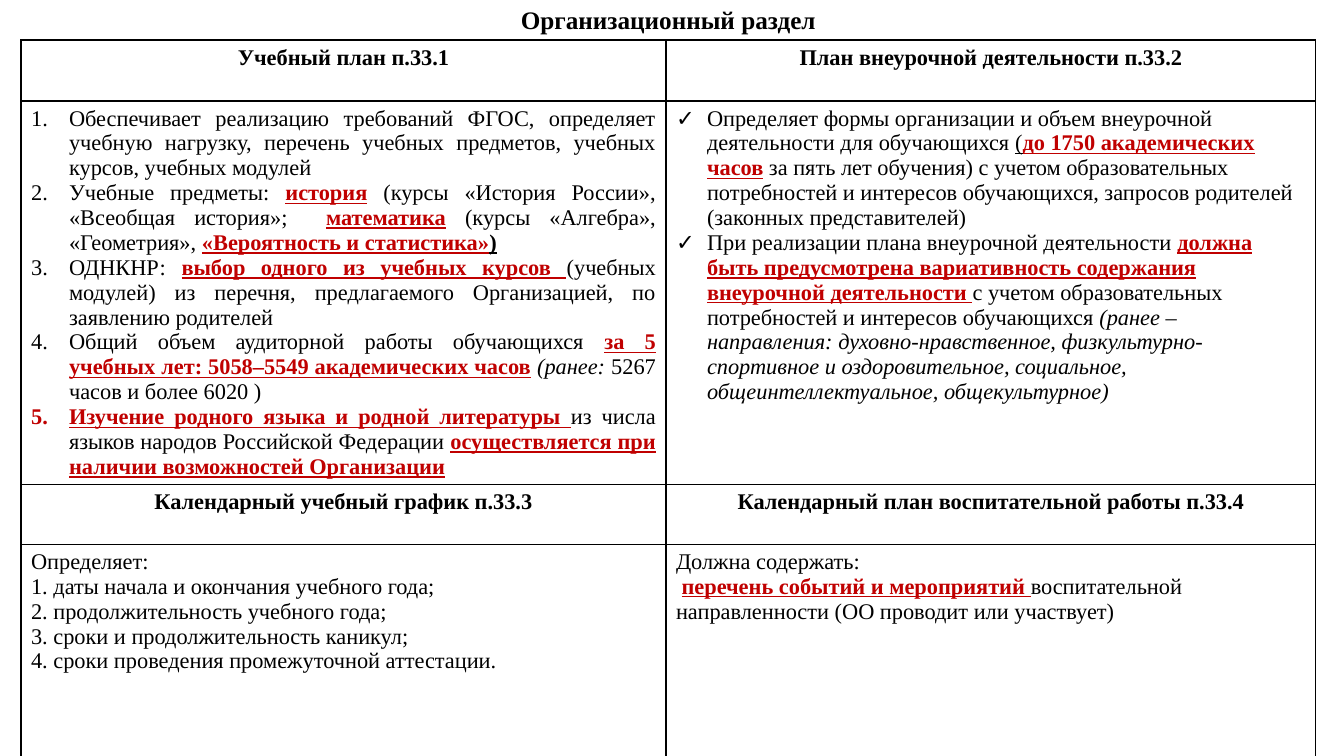
from pptx import Presentation
from pptx.dml.color import RGBColor as Rgb
from pptx.enum.text import PP_ALIGN as Align
from pptx.oxml import parse_xml
from pptx.oxml.ns import nsdecls
from pptx.util import Emu, Pt

FONT = "Times New Roman"
BLACK, RED, WHITE = "000000", "C00000", "FFFFFF"
KEY = "rbu"

PLAN = [
    [("Обеспечивает реализацию требований ФГОС, определяет учебную нагрузку, перечень "
      "учебных предметов, учебных курсов, учебных модулей", "")],
    [("Учебные предметы: ", ""), ("история", KEY), (" ", "rb"),
     ("(курсы «История России», «Всеобщая история»;  ", ""), ("математика", KEY),
     (" ", "rb"), ("(курсы «Алгебра», «Геометрия», ", ""),
     ("«Вероятность и статистика»", KEY), (")", "bu")],
    [("ОДНКНР: ", ""), ("выбор одного из учебных курсов ", KEY),
     ("(учебных модулей) из перечня, предлагаемого Организацией, по заявлению родителей", "")],
    [("Общий объем аудиторной работы обучающихся ", ""),
     ("за 5 учебных лет: 5058–5549 академических часов", KEY), (" ", "rb"),
     ("(ранее: ", "i"), ("5267 часов и более 6020 )", "")],
    [("Изучение родного языка и родной литературы ", KEY),
     ("из числа языков народов Российской Федерации ", ""),
     ("осуществляется при наличии возможностей Организации", KEY)],
]
EXTRA = [
    [("Определяет формы организации и объем внеурочной деятельности для обучающихся ", ""),
     ("(", "u"), ("до 1750 академических часов", KEY),
     (" за пять лет обучения) с учетом образовательных потребностей и интересов "
      "обучающихся, запросов родителей (законных представителей)", "")],
    [("При реализации плана внеурочной деятельности ", ""),
     ("должна быть предусмотрена вариативность содержания внеурочной деятельности ", KEY),
     ("с учетом образовательных потребностей и интересов обучающихся ", ""),
     ("(ранее – направления: духовно-нравственное, физкультурно-спортивное и "
      "оздоровительное, социальное, общеинтеллектуальное, общекультурное)", "i")],
]
DATES = [[(line, "")] for line in (
    "Определяет:",
    "1. даты начала и окончания учебного года;",
    "2. продолжительность учебного года;",
    "3. сроки и продолжительность каникул;",
    "4. сроки проведения промежуточной аттестации.",
)]
EVENTS = [
    [("Должна содержать:", "")],
    [(" ", ""), ("перечень событий и мероприятий ", KEY),
     ("воспитательной направленности (ОО проводит или участвует)", "")],
]
NUMBER = '<a:buFont {} typeface="+mj-lt"/>', '<a:buAutoNum {} type="arabicPeriod"/>'
CHECK = '<a:buFont {} typeface="Arial"/>', '<a:buChar {} char="✓"/>'


def px(num):
    return Emu(round(num * 914400 / 100.8))


def color(code):
    return Rgb.from_string(code)


def xml(text):
    return parse_xml(text.format(nsdecls("a")))


def add_run(para, text, style, size):
    run = para.add_run()
    run.text = text
    font = run.font
    font.name, font.size = FONT, Pt(size)
    font.bold, font.italic, font.underline = (key in style for key in "biu")
    font.color.rgb = color(RED if "r" in style else BLACK)


def add_mark(para, mark, gap):
    props = para._p.get_or_add_pPr()
    props.set("marL", str(px(gap)))
    props.set("indent", str(-px(gap)))
    for part in mark:
        props.append(xml(part))


def write(frame, paras, align=Align.LEFT, mark=None, gap=0, size=16):
    frame.word_wrap = True
    for num, runs in enumerate(paras):
        para = frame.add_paragraph() if num else frame.paragraphs[0]
        para.alignment = align
        if mark:
            add_mark(para, mark, gap)
        for text, style in runs:
            add_run(para, text, style, size)


def paint(cell):
    props = cell._tc.get_or_add_tcPr()
    for side in ("lnL", "lnR", "lnT", "lnB"):
        props.append(xml(f'<a:{side} {{}} w="12700"><a:solidFill>'
                         f'<a:srgbClr val="{BLACK}"/></a:solidFill></a:{side}>'))
    cell.fill.solid()
    cell.fill.fore_color.rgb = color(WHITE)


def add_title(slide, text):
    box = slide.shapes.add_textbox(px(511), px(-1), px(419), px(40))
    write(box.text_frame, [[(text, "b")]], size=18)


def add_grid(slide, cols, rows):
    shape = slide.shapes.add_table(len(rows), len(cols), px(21), px(40),
                                   px(sum(cols)), px(sum(rows)))
    table = shape.table
    for col, width in zip(table.columns, cols):
        col.width = px(width)
    for row, height in zip(table.rows, rows):
        row.height = px(height)
    for cell in table.iter_cells():
        paint(cell)
    return table


def main():
    deck = Presentation()
    deck.slide_width, deck.slide_height = px(1344), px(756)
    slide = deck.slides.add_slide(deck.slide_layouts[6])
    table = add_grid(slide, (645, 650), (61, 383, 60, 259))
    heads = (
        ("Учебный план п.33.1", "План внеурочной деятельности п.33.2"),
        ("Календарный учебный график п.33.3",
         "Календарный план воспитательной работы п.33.4"),
    )
    for band, pair in enumerate(heads):
        for col, text in enumerate(pair):
            write(table.cell(band * 2, col).text_frame, [[(text, "b")]], Align.CENTER)
    write(table.cell(1, 0).text_frame, PLAN, Align.JUSTIFY, NUMBER, 38)
    write(table.cell(1, 1).text_frame, EXTRA, mark=CHECK, gap=31)
    write(table.cell(3, 0).text_frame, DATES)
    write(table.cell(3, 1).text_frame, EVENTS)
    add_title(slide, "Организационный раздел")
    deck.save("out.pptx")


if __name__ == "__main__":
    main()
